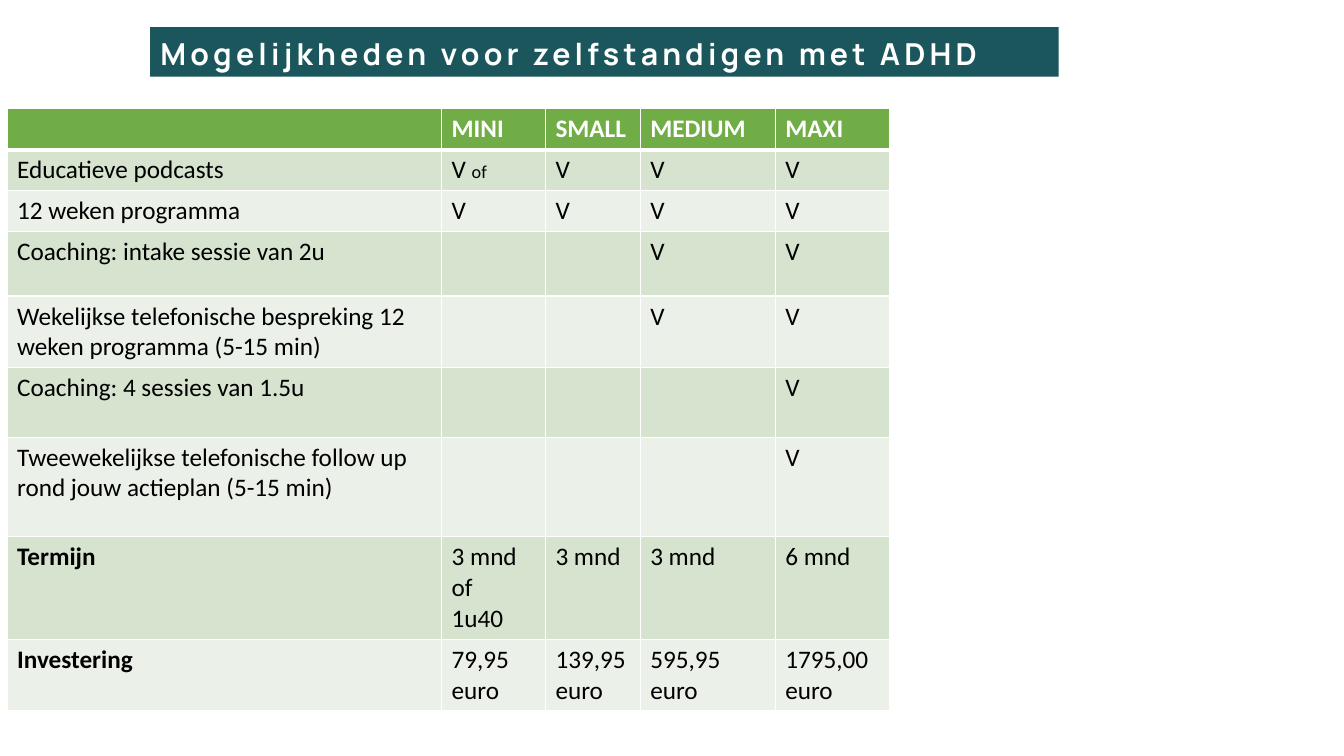
from dataclasses import dataclass
from lxml.etree import SubElement
from pptx import Presentation
from pptx.dml.color import RGBColor as Rgb
from pptx.enum.text import MSO_ANCHOR as Anchor, MSO_AUTO_SIZE as AutoSize, PP_ALIGN as Align
from pptx.oxml.ns import qn
from pptx.util import Inches, Pt


@dataclass(frozen=True)
class Theme:
    white: str = "FFFFFF"
    black: str = "000000"
    teal: str = "1A565B"
    green: str = "70AD47"
    bands: tuple = ("D5E3CF", "EBF1E9")
    title_font: str = "Manrope"
    body_font: str = "Calibri"
    title_size: float = 21.6
    body_size: float = 18
    small_size: float = 13
    border: float = 1
    header_border: float = 3


def add_text(paragraph, text, *, font, size, color, bold=False, spacing=0):
    run = paragraph.add_run()
    run.text = text
    run.font.name = font
    run.font.size = Pt(size)
    run.font.bold = bold
    run.font.color.rgb = Rgb.from_string(color)
    if spacing:
        run.font._element.set("spc", str(spacing * 100))


class OfferSlide:
    def __init__(self, deck, theme):
        self.theme = theme
        self.slide = deck.slides.add_slide(deck.slide_layouts[5])

    def title(self, text, left, top, width, height):
        theme = self.theme
        heading = self.slide.shapes.title
        heading.left, heading.top = Inches(left), Inches(top)
        heading.width, heading.height = Inches(width), Inches(height)
        heading.fill.solid()
        heading.fill.fore_color.rgb = Rgb.from_string(theme.teal)
        frame = heading.text_frame
        frame.auto_size = AutoSize.NONE
        frame.word_wrap = True
        frame.vertical_anchor = Anchor.MIDDLE
        frame.margin_left = frame.margin_right = Inches(0.1)
        frame.margin_top, frame.margin_bottom = Inches(0.12), Inches(0.05)
        line = frame.paragraphs[0]
        line.alignment = Align.LEFT
        line.line_spacing = 0.9
        add_text(line, text, font=theme.title_font, size=theme.title_size,
                 color=theme.white, bold=True, spacing=3)

    def borders(self, cell, top, bottom):
        properties = cell._tc.get_or_add_tcPr()
        widths = {"L": self.theme.border, "R": self.theme.border, "T": top, "B": bottom}
        for side, width in widths.items():
            edge = SubElement(properties, qn(f"a:ln{side}"), w=str(Pt(width)))
            paint = SubElement(edge, qn("a:solidFill"))
            SubElement(paint, qn("a:srgbClr"), val=self.theme.white)

    def cell(self, cell, content, row, bold):
        theme = self.theme
        header = row == 0
        self.borders(cell, theme.header_border if row == 1 else theme.border,
                     theme.header_border if header else theme.border)
        cell.fill.solid()
        cell.fill.fore_color.rgb = Rgb.from_string(
            theme.green if header else theme.bands[(row - 1) % 2])
        frame = cell.text_frame
        for index, words in enumerate(content.split("\n")):
            line = frame.add_paragraph() if index else frame.paragraphs[0]
            main, mark, small = words.partition("|")
            for part, size in ((main, theme.body_size), (small, theme.small_size)):
                if part:
                    add_text(line, part, font=theme.body_font, size=size, bold=bold,
                             color=theme.white if header else theme.black)

    def table(self, rows, left, top, height, widths, heights, bold_labels):
        frame = self.slide.shapes.add_table(
            len(rows), len(widths), Inches(left), Inches(top),
            Inches(sum(widths)), Inches(height))
        grid = frame.table
        for column, width in zip(grid.columns, widths):
            column.width = Inches(width)
        for line, row_height in zip(grid.rows, heights):
            line.height = Inches(row_height)
        frame.height = Inches(height)
        for row, contents in enumerate(rows):
            for column, content in enumerate(contents):
                bold = row == 0 or content in bold_labels
                self.cell(grid.cell(row, column), content, row, bold)


def main():
    deck = Presentation()
    deck.slide_width, deck.slide_height = Inches(13.33), Inches(7.5)
    offer = OfferSlide(deck, Theme())
    offer.title("Mogelijkheden voor zelfstandigen met ADHD", 1.49, 0.27, 9.01, 0.49)
    packages = [
        ("", "MINI", "SMALL", "MEDIUM", "MAXI"),
        ("Educatieve podcasts", "V |of", "V", "V", "V"),
        ("12 weken programma", "V", "V", "V", "V"),
        ("Coaching: intake sessie van 2u", "", "", "V", "V"),
        ("Wekelijkse telefonische bespreking 12 weken programma (5-15 min)",
         "", "", "V", "V"),
        ("Coaching: 4 sessies van 1.5u", "", "", "", "V"),
        ("Tweewekelijkse telefonische follow up rond jouw actieplan (5-15 min)",
         "", "", "", "V"),
        ("Termijn", "3 mnd of\n1u40", "3 mnd", "3 mnd", "6 mnd"),
        ("Investering", "79,95 euro", "139,95 euro", "595,95 euro", "1795,00 euro"),
    ]
    offer.table(packages, left=0.07, top=1.08, height=5.92,
                widths=(4.31, 1.03, 0.94, 1.34, 1.13),
                heights=(0.18, 0.39, 0.4, 0.64, 0.69, 0.69, 0.99, 0.8, 0.69),
                bold_labels=("Termijn", "Investering"))
    deck.save("out.pptx")


if __name__ == "__main__":
    main()
